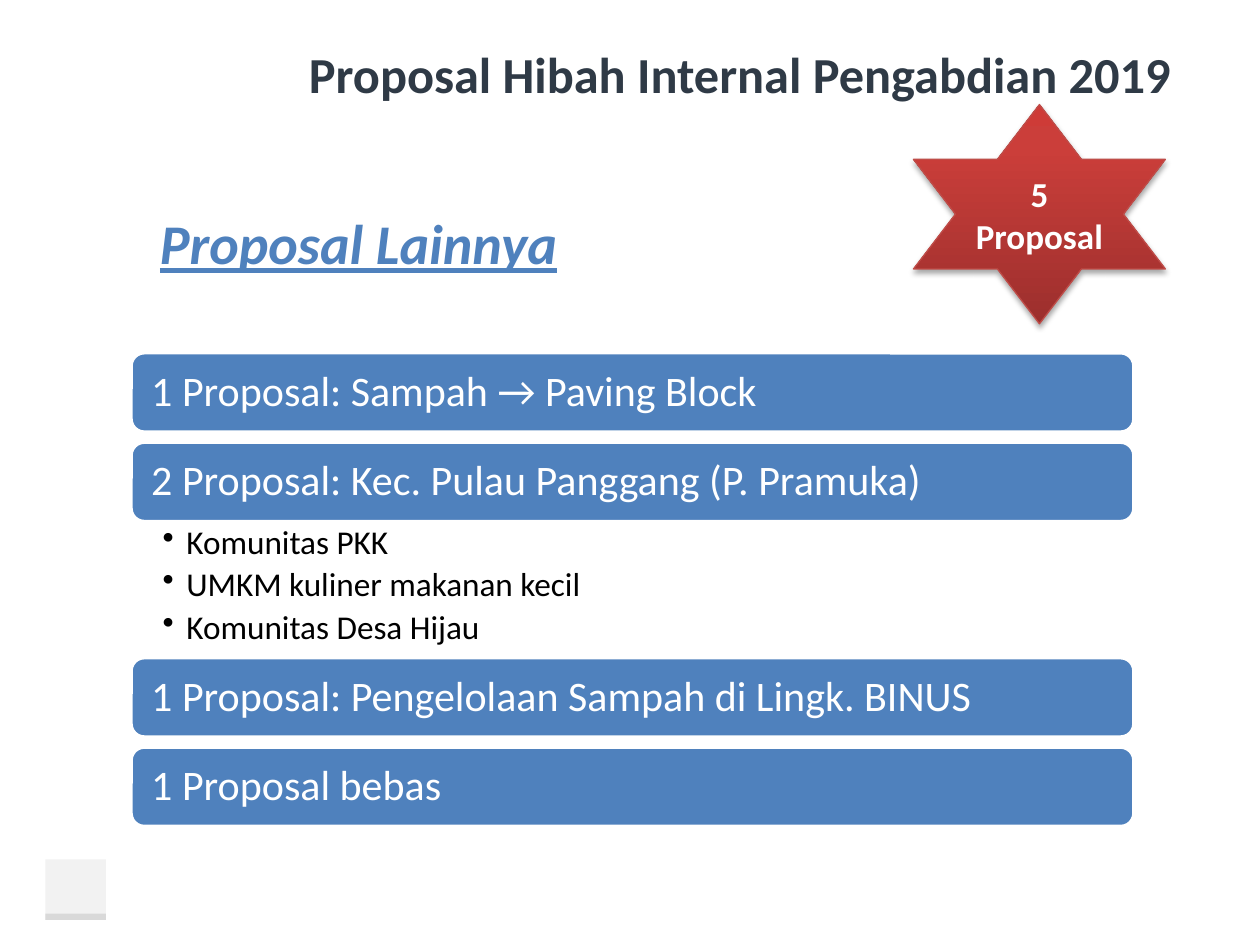
import copy

import pptx
import pptx.dml.color
import pptx.enum.shapes
import pptx.enum.text
import pptx.oxml
import pptx.oxml.ns
import pptx.util

Inches = pptx.util.Inches
Pt = pptx.util.Pt
Kind = pptx.enum.shapes.MSO_SHAPE
Align = pptx.enum.text.PP_ALIGN
Anchor = pptx.enum.text.MSO_ANCHOR
BLUE = "4F81BD"
WHITE = "FFFFFF"
BULLET = '<a:buChar %s char="•"/>' % pptx.oxml.ns.nsdecls("a")
SHADE = (
    '<a:effectLst %s><a:outerShdw blurRad="40000" dist="23000" dir="5400000" rotWithShape="0">'
    '<a:srgbClr val="000000"><a:alpha val="35000"/></a:srgbClr>'
    "</a:outerShdw></a:effectLst>" % pptx.oxml.ns.nsdecls("a")
)


def color(code):
    return pptx.dml.color.RGBColor.from_string(code)


def apply(target, values):
    for name, value in values.items():
        setattr(target, name, value)


class Deck:
    font = "Calibri"

    def __init__(self, wide, high):
        self.show = pptx.Presentation()
        apply(self.show, {"slide_width": Inches(wide), "slide_height": Inches(high)})
        self.slide = self.show.slides.add_slide(self.show.slide_layouts[6])

    def label(self, shape, lines, size, code, style=None, para=None, frame=None, bullet=False):
        body = shape.text_frame
        apply(body, {"word_wrap": True, **(frame or {})})
        for i, line in enumerate(lines):
            item = body.paragraphs[0] if i == 0 else body.add_paragraph()
            apply(item, {"alignment": Align.LEFT, **(para or {})})
            if bullet:
                props = item._p.get_or_add_pPr()
                props.set("marL", str(Inches(0.19)))
                props.set("indent", str(-Inches(0.19)))
                props.append(pptx.oxml.parse_xml(BULLET))
            run = item.add_run()
            run.text = line
            apply(run.font, {"name": self.font, "size": Pt(size), **(style or {})})
            run.font.color.rgb = color(code)

    def text(self, box, lines, size, code, **more):
        shape = self.slide.shapes.add_textbox(*map(Inches, box))
        self.label(shape, lines, size, code, **more)

    def block(self, kind, box, fill, line=None, width=0):
        shape = self.slide.shapes.add_shape(kind, *map(Inches, box))
        shape.shadow.inherit = False
        shape.fill.solid()
        shape.fill.fore_color.rgb = color(fill)
        if line:
            shape.line.color.rgb = color(line)
            shape.line.width = Pt(width)
        else:
            shape.line.fill.background()
        return shape

    def bar(self, box, title):
        shape = self.block(Kind.ROUNDED_RECTANGLE, box, BLUE, WHITE, 2)
        frame = {"margin_left": Inches(0.13), "vertical_anchor": Anchor.MIDDLE}
        self.label(shape, [title], 24, WHITE, para={"line_spacing": 0.9}, frame=frame)

    def points(self, box, lines):
        frame = {
            "margin_left": Inches(0.25),
            "margin_right": Inches(0.19),
            "margin_top": Inches(0.03),
            "margin_bottom": Inches(0.03),
        }
        para = {"line_spacing": 0.9, "space_after": Pt(3.8)}
        self.text(box, lines, 19, "000000", para=para, frame=frame, bullet=True)

    def star(self, box, title, stops):
        shape = self.block(Kind.STAR_6_POINT, box, WHITE, "BF4C48", 0.75)
        shape.fill.gradient()
        shape.fill.gradient_angle = 90
        props = shape._element.spPr
        ramp = props.find(".//" + pptx.oxml.ns.qn("a:gsLst"))
        ramp.append(copy.deepcopy(ramp[-1]))
        for stop, (place, code) in zip(shape.fill.gradient_stops, stops):
            stop.position = place
            stop.color.rgb = color(code)
        props.replace(props.find(pptx.oxml.ns.qn("a:effectLst")), pptx.oxml.parse_xml(SHADE))
        self.label(shape, [title], 20, WHITE, style={"bold": True},
                   para={"alignment": Align.CENTER}, frame={"vertical_anchor": Anchor.MIDDLE})


def main():
    deck = Deck(10, 7.5)
    deck.block(Kind.RECTANGLE, (0.36, 6.82, 0.48, 0.48), "F2F2F2")
    deck.block(Kind.RECTANGLE, (0.36, 7.25, 0.48, 0.05), "D9D9D9")
    deck.text((2.25, 0.24, 7.25, 0.68), ["Proposal Hibah Internal Pengabdian 2019"], 28.8, "2F3A46",
              style={"bold": True}, para={"alignment": Align.CENTER},
              frame={"vertical_anchor": Anchor.MIDDLE})
    deck.text((1.17, 1.61, 6.58, 0.64), ["Proposal Lainnya"], 32, BLUE,
              style={"bold": True, "italic": True, "underline": True})
    deck.star((7.25, 0.83, 2, 1.74), "5 Proposal",
              [(0, "9C2F2D"), (0.8, "CB3E3A"), (1, "CE3B37")])

    groups = [
        ("1 Proposal: Sampah → Paving Block", []),
        ("2 Proposal: Kec. Pulau Panggang (P. Pramuka)",
         ["Komunitas PKK", "UMKM kuliner makanan kecil", "Komunitas Desa Hijau"]),
        ("1 Proposal: Pengelolaan Sampah di Lingk. BINUS", []),
        ("1 Proposal bebas", []),
    ]
    left, top, wide, high = 1.04, 2.8, 7.96, 0.63
    gap, depth = 0.08, 1.08
    for title, lines in groups:
        deck.bar((left, top, wide, high), title)
        top += high
        if lines:
            deck.points((left, top, wide, depth), lines)
        top += depth if lines else gap
    deck.show.save("out.pptx")


if __name__ == "__main__":
    main()
